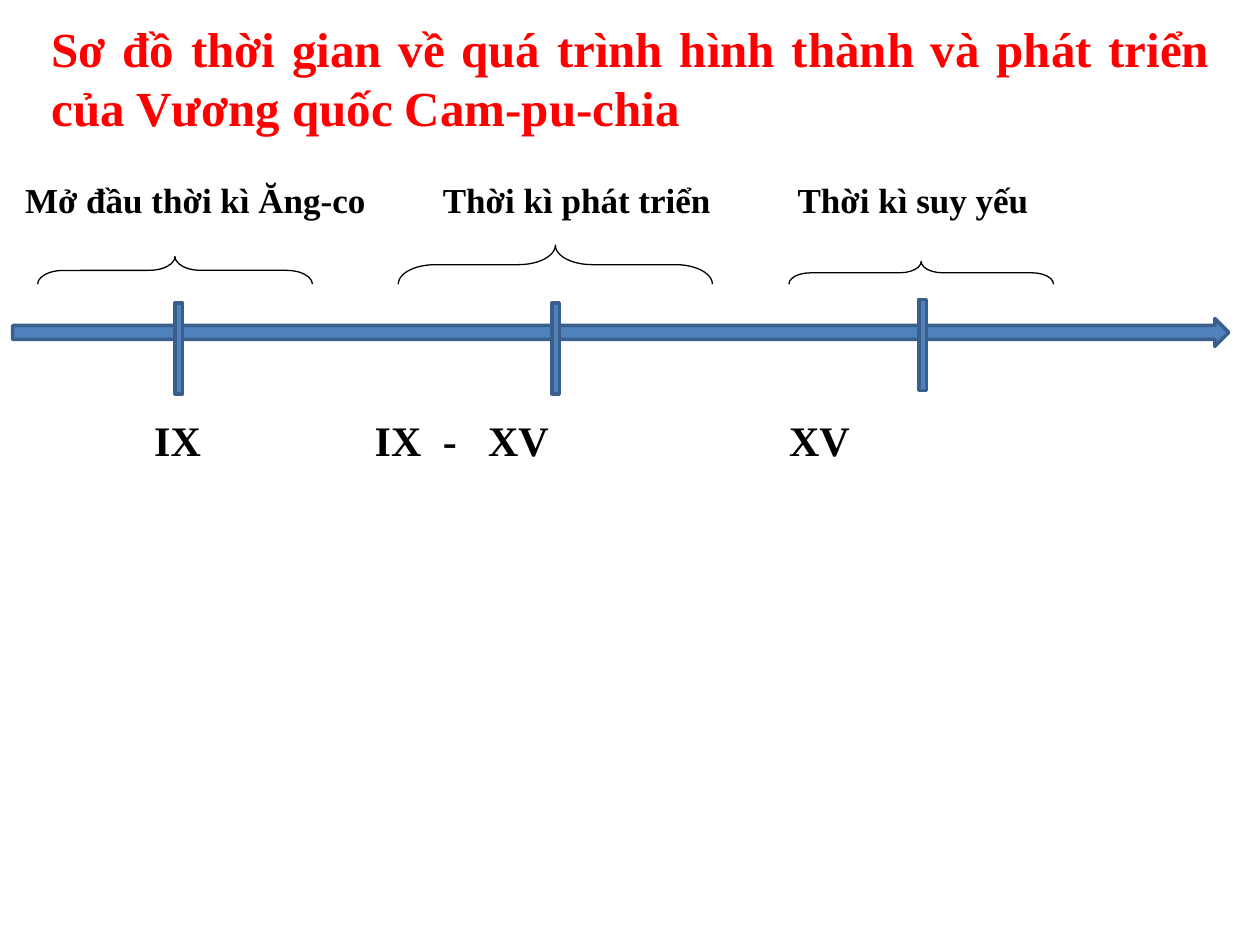
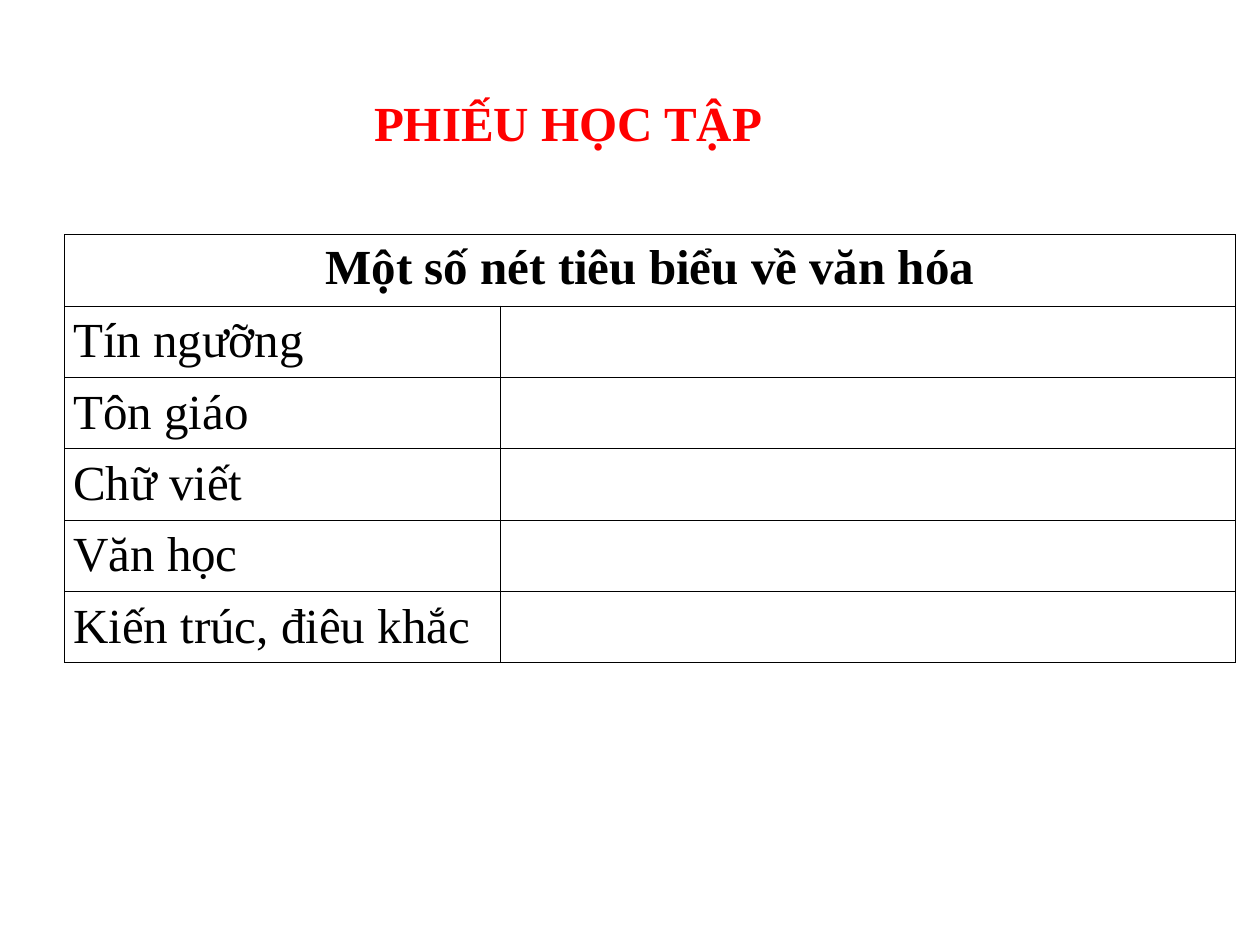
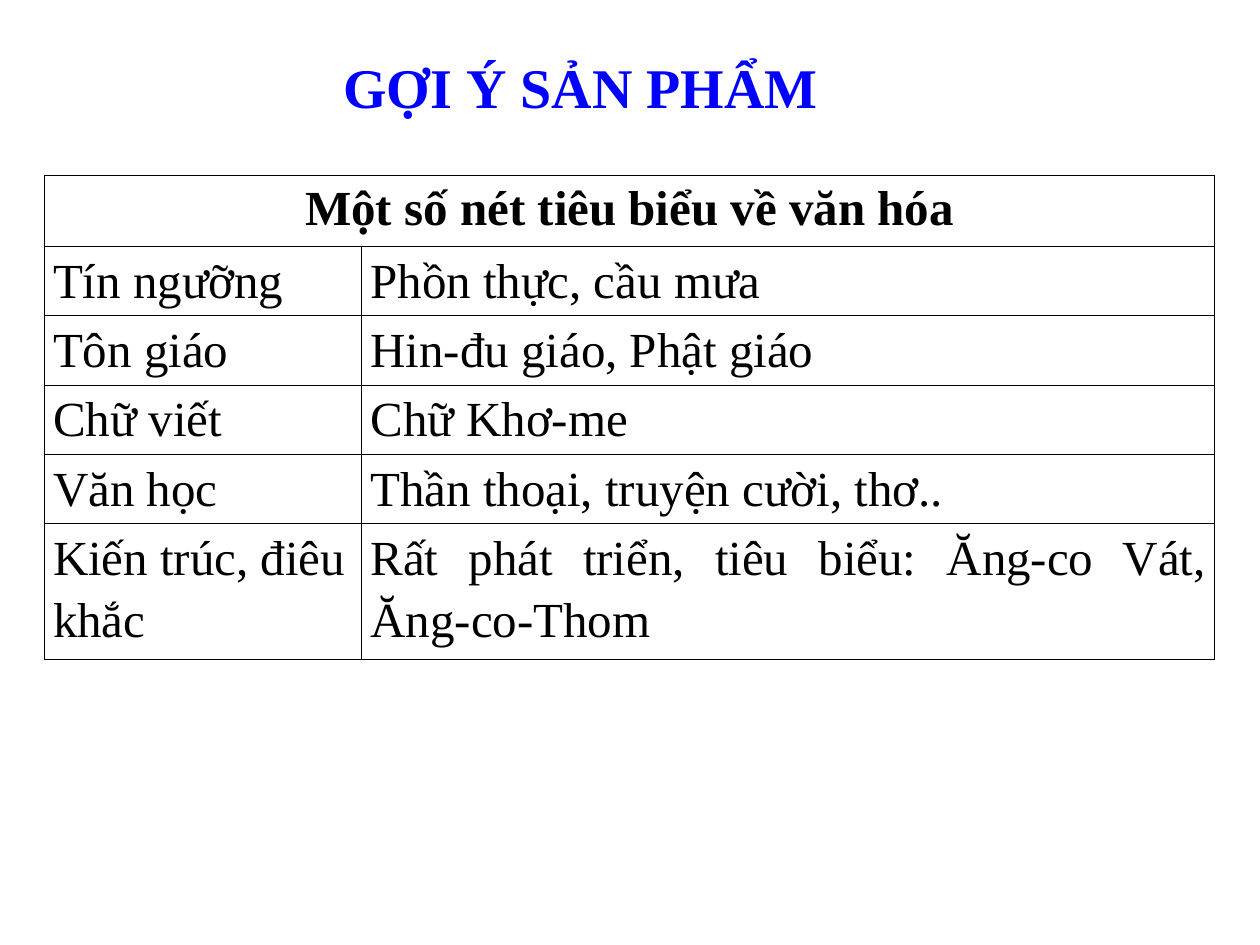
import dataclasses

import lxml.etree
import pptx
import pptx.dml.color
import pptx.enum.shapes
import pptx.enum.text
import pptx.oxml.ns
import pptx.util

Pt = pptx.util.Pt
qn = pptx.oxml.ns.qn
Shape = pptx.enum.shapes.MSO_SHAPE
Align = pptx.enum.text.PP_ALIGN
Anchor = pptx.enum.text.MSO_ANCHOR


@dataclasses.dataclass(frozen=True)
class Theme:
    font: str = "Times New Roman"
    ink: str = "000000"
    red: str = "FF0000"
    blue: str = "0000FF"
    axis_fill: str = "4F81BD"
    axis_line: str = "3A5F8C"
    large_title_size: int = 32
    title_size: int = 28
    table_size: int = 28
    century_size: int = 24
    period_size: int = 20
    axis_weight: float = 2
    thin_weight: float = 0.75
    border_weight: float = 0.5


def color(value):
    return pptx.dml.color.RGBColor.from_string(value)


def write(frame, text, *, font, size, ink, bold=False, align=None, spacing=None, tabs=()):
    """Fill a text frame with one formatted paragraph; tabs are offsets in points."""
    para = frame.paragraphs[0]
    para.alignment = align
    if spacing:
        para.line_spacing = spacing
    if tabs:
        tab_list = lxml.etree.SubElement(para._p.get_or_add_pPr(), qn("a:tabLst"))
        for offset in tabs:
            lxml.etree.SubElement(tab_list, qn("a:tab"), pos=str(Pt(offset)), algn="l")
    span = para.add_run()
    span.text = text
    span.font.name = font
    span.font.size = Pt(size)
    span.font.bold = bold
    span.font.color.rgb = color(ink)


def add_borders(cell, ink, weight):
    properties = cell._tc.get_or_add_tcPr()
    for side in ("a:lnL", "a:lnR", "a:lnT", "a:lnB"):
        line = lxml.etree.SubElement(properties, qn(side), w=str(Pt(weight)))
        fill = lxml.etree.SubElement(line, qn("a:solidFill"))
        lxml.etree.SubElement(fill, qn("a:srgbClr"), val=ink)


class Page:
    def __init__(self, deck, theme):
        self.theme = theme
        self.slide = deck.slides.add_slide(deck.slide_layouts.get_by_name("Title Only"))

    def fit(self, box, anchor):
        frame = box.text_frame
        frame.word_wrap = True
        frame.auto_size = pptx.enum.text.MSO_AUTO_SIZE.SHAPE_TO_FIT_TEXT
        frame.vertical_anchor = anchor
        return frame

    def title(self, text, left, top, width, height, *, ink, size, align):
        box = self.slide.shapes.title
        box.left, box.top, box.width, box.height = map(Pt, (left, top, width, height))
        write(self.fit(box, Anchor.TOP), text, font=self.theme.font, size=size,
              ink=ink, bold=True, align=align)

    def label_row(self, text, left, top, width, height, *, size, tabs):
        box = self.slide.shapes.add_textbox(*map(Pt, (left, top, width, height)))
        write(self.fit(box, Anchor.MIDDLE), text, font=self.theme.font, size=size,
              ink=self.theme.ink, bold=True, tabs=tabs)

    def shape(self, kind, left, top, width, height, *, line, weight, fill=None):
        shape = self.slide.shapes.add_shape(kind, *map(Pt, (left, top, width, height)))
        shape.shadow.inherit = False
        if fill:
            shape.fill.solid()
            shape.fill.fore_color.rgb = color(fill)
        else:
            shape.fill.background()
        shape.line.color.rgb = color(line)
        shape.line.width = Pt(weight)
        return shape

    def axis_part(self, kind, left, top, width, height):
        theme = self.theme
        self.shape(kind, left, top, width, height, fill=theme.axis_fill,
                   line=theme.axis_line, weight=theme.axis_weight)

    def brace(self, center, base, length, depth):
        """Draw a brace that opens downwards and ends on the base line."""
        brace = self.shape(Shape.LEFT_BRACE, center - depth / 2, base - (depth + length) / 2,
                           depth, length, line=self.theme.ink, weight=self.theme.thin_weight)
        brace.rotation = 90
        brace.adjustments[0] = 0.94

    def table(self, heading, rows, left, top, widths, row_height):
        grid = self.slide.shapes.add_table(
            len(rows) + 1, len(widths), Pt(left), Pt(top),
            Pt(sum(widths)), Pt(row_height * (len(rows) + 1))).table
        grid.first_row = grid.horz_banding = False
        for column, width in zip(grid.columns, widths):
            column.width = Pt(width)
        for row in grid.rows:
            row.height = Pt(row_height)
        for cell in grid.iter_cells():
            add_borders(cell, self.theme.ink, self.theme.border_weight)
            cell.fill.background()
        style = dict(font=self.theme.font, size=self.theme.table_size, ink=self.theme.ink)
        grid.cell(0, 0).merge(grid.cell(0, len(widths) - 1))
        write(grid.cell(0, 0).text_frame, heading, bold=True, align=Align.CENTER, **style)
        for row_index, texts in enumerate(rows, 1):
            for column_index, text in enumerate(texts):
                cell = grid.cell(row_index, column_index)
                cell.margin_left = cell.margin_right = Pt(5)
                cell.margin_top = cell.margin_bottom = 0
                if text:
                    write(cell.text_frame, text, spacing=1.15,
                          align=Align.JUSTIFY if column_index else Align.LEFT, **style)


CULTURE_HEADING = "Một số nét tiêu biểu về văn hóa"
CULTURE = {
    "Tín ngưỡng": "Phồn thực, cầu mưa",
    "Tôn giáo": "Hin-đu giáo, Phật giáo",
    "Chữ viết": "Chữ Khơ-me",
    "Văn học": "Thần thoại, truyện cười, thơ..",
    "Kiến trúc, điêu khắc": "Rất phát triển, tiêu biểu: Ăng-co Vát, Ăng-co-Thom",
}


def build_timeline(deck, theme):
    page = Page(deck, theme)
    page.title("Sơ đồ thời gian về quá trình hình thành và phát triển của Vương quốc Cam-pu-chia",
               22.3, 7.2, 676, 75, ink=theme.red, size=theme.title_size, align=Align.JUSTIFY)
    page.axis_part(Shape.RIGHT_ARROW, 7.2, 182, 695, 16)
    for center, top in ((102.2, 88.6), (317.5, 88.6), (527.2, 86.6)):
        page.axis_part(Shape.MATH_MINUS, center - 2.9, top, 5.8, 221)
    for center, length, depth in ((100, 157, 15.8), (317.3, 179.5, 22.3), (526.4, 151.2, 13)):
        page.brace(center, 162.4, length, depth)
    page.label_row("Mở đầu thời kì Ăng-co\tThời kì phát triển\tThời kì suy yếu",
                   7.2, 98, 594, 31.5, size=theme.period_size, tabs=(238.8, 441.5))
    page.label_row("\tIX\tIX\t-\tXV\tXV", 21, 233.3, 611, 36,
                   size=theme.century_size, tabs=(60, 186, 225, 250.8, 422.8))


def build_worksheet(deck, theme):
    page = Page(deck, theme)
    page.title("PHIẾU HỌC TẬP", 206.6, 49, 266.4, 41,
               ink=theme.red, size=theme.title_size, align=Align.JUSTIFY)
    page.table(CULTURE_HEADING, [(topic, "") for topic in CULTURE],
               36.9, 134, (249.3, 419.5), 40.8)


def build_answers(deck, theme):
    page = Page(deck, theme)
    page.title("GỢI Ý SẢN PHẨM", 105, 26.6, 453.6, 46,
               ink=theme.blue, size=theme.large_title_size, align=Align.CENTER)
    page.table(CULTURE_HEADING, list(CULTURE.items()), 25.3, 100, (181.4, 487.4), 39.6)


def main():
    deck = pptx.Presentation()
    deck.slide_width, deck.slide_height = Pt(720), Pt(540)
    theme = Theme()
    for build in (build_timeline, build_worksheet, build_answers):
        build(deck, theme)
    deck.save("out.pptx")


if __name__ == "__main__":
    main()
